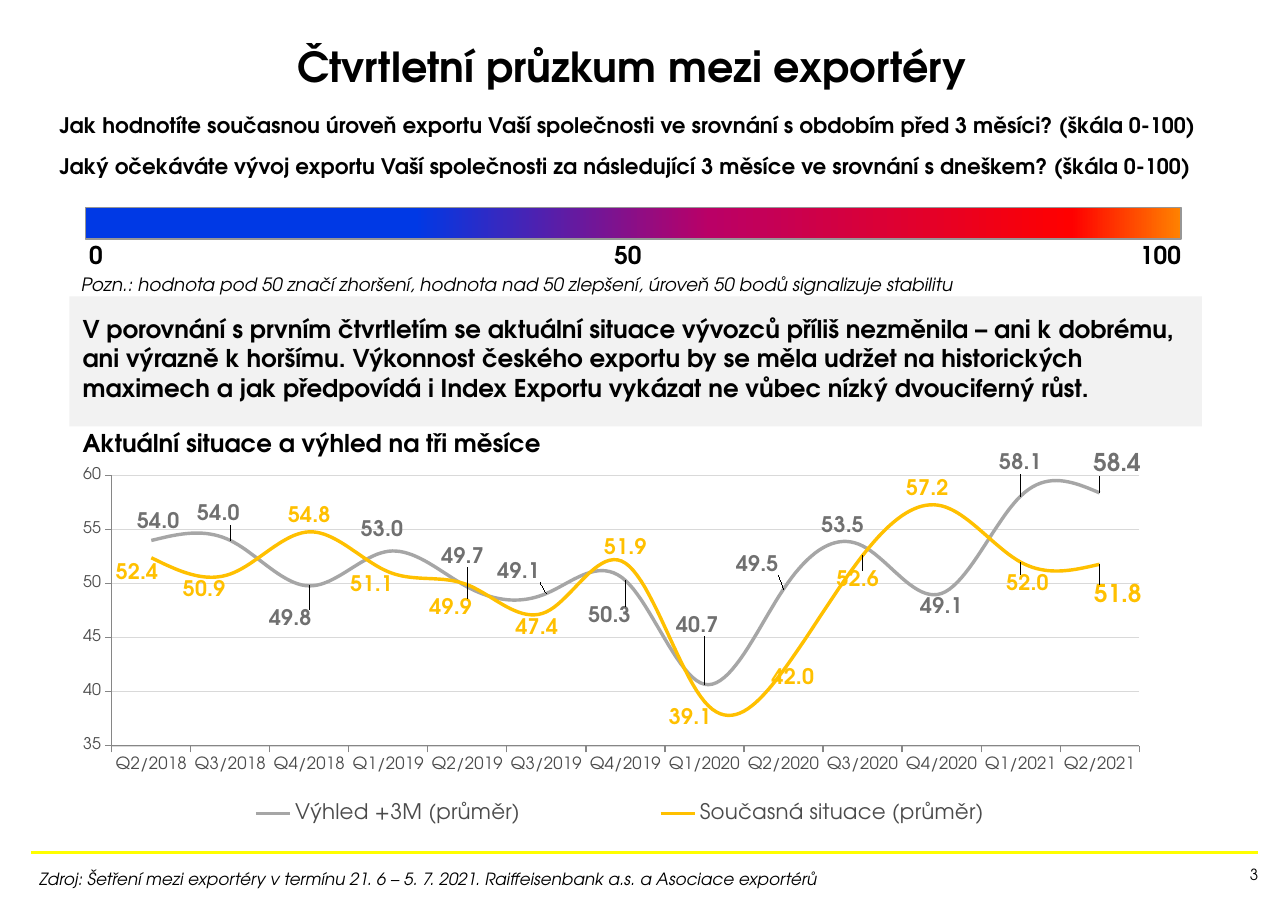
import dataclasses
import typing

import lxml.etree
import pptx
import pptx.chart.data
import pptx.dml.color
import pptx.enum.chart
import pptx.enum.shapes
import pptx.enum.text
import pptx.oxml.ns
import pptx.util

Pt = pptx.util.Pt
qn = pptx.oxml.ns.qn
Align = pptx.enum.text.PP_ALIGN
Anchor = pptx.enum.text.MSO_ANCHOR
Shape = pptx.enum.shapes.MSO_SHAPE
LabelPos = pptx.enum.chart.XL_LABEL_POSITION

W, H = pptx.util.Inches(11.69), pptx.util.Inches(8.27)
COL, ROW = W / 100, H / 100


@dataclasses.dataclass(frozen=True)
class Theme:
    font: str = "TeX Gyre Adventor"
    black: str = "000000"
    panel: str = "F2F2F2"
    rule: str = "FFFF00"
    frame: str = "969696"
    axis: str = "868686"
    grid: str = "D9D9D9"
    chart_text: str = "4B4B4B"
    outlook: str = "A6A6A6"
    outlook_label: str = "707070"
    current: str = "FFC000"
    scale: tuple = ((30, "0039E5"), (57, "BA0066"), (90, "FF0000"), (100, "FF8200"))
    title: float = 27
    large: float = 16
    medium: float = 14
    note: float = 12
    source: float = 11
    page: float = 10
    value_tick: float = 10.5


T = Theme()
WIDE = (0.12, 0.16, 0.12, 0)
NORMAL = (0.1, 0.05, 0.1, 0.05)
NONE = (0, 0, 0, 0)


class Box(typing.NamedTuple):
    col: float
    row: float
    cols: float
    rows: float

    def emu(self) -> tuple:
        return (int(self.col * COL), int(self.row * ROW),
                int(self.cols * COL), int(self.rows * ROW))


@dataclasses.dataclass(frozen=True)
class Block:
    box: Box
    lines: tuple
    size: float
    bold: bool = False
    italic: bool = False
    align: typing.Any = Align.LEFT
    insets: tuple = WIDE
    tabs: tuple = ()
    fill: str = ""


@dataclasses.dataclass(frozen=True)
class Line:
    name: str
    values: tuple
    color: str
    label_color: str
    label_pos: typing.Any
    nudges: dict


PLOT = (0.06, 0.08, 0.94, 0.66)
LEGEND = (0.07, 0.86, 0.91, 0.09)
LOW, HIGH, STEP = 35, 60, 5
QUARTERS = [f"Q{n % 4 + 1}/{2018 + n // 4}" for n in range(1, 14)]
LINES = (
    Line("Výhled +3M (průměr)",
         (54, 54, 49.8, 53, 49.7, 49.1, 50.3, 40.7, 49.5, 53.5, 49.1, 58.1, 58.4),
         T.outlook, T.outlook_label, LabelPos.BELOW,
         {0: (0.09, 3.04), 1: (-0.15, 3.69), 2: (-0.24, -1.74), 3: (-0.08, 3.3),
          4: (-0.06, 4.09), 5: (-0.35, 3.31), 6: (-0.2, -1.96), 7: (-0.09, 6.7),
          8: (-0.33, 3.56), 9: (-0.25, 3.17), 11: (0, 4.31), 12: (0.22, 4.07)}),
    Line("Současná situace (průměr)",
         (52.4, 50.9, 54.8, 51.1, 49.9, 47.4, 51.9, 39.1, 42, 52.6, 57.2, 52, 51.8),
         T.current, T.current, LabelPos.ABOVE,
         {0: (-0.18, -2.86), 1: (-0.33, -2.94), 3: (-0.21, -2.68), 4: (-0.21, -3.6),
          5: (-0.12, -2.95), 7: (-0.18, -2.99), 8: (0.12, -2.19), 9: (-0.06, -3.71),
          10: (-0.18, 0.11), 11: (0.09, -3.48), 12: (0.23, -4.39)}),
)

TITLE = Block(Box(5.47, 2.18, 87.17, 10.04), ("Čtvrtletní průzkum mezi exportéry",),
              T.title, bold=True, align=Align.CENTER, insets=NONE)
BLOCKS = (
    Block(Box(57.83, 94.92, 39.86, 5.08), ("3",), T.page, align=Align.RIGHT, insets=NONE),
    Block(Box(5.9, 24.43, 91.79, 6.05), ("0\t50\t100",), T.large, bold=True,
          tabs=((41.83, "ctr"), (84.77, "r"))),
    Block(Box(5.47, 29.38, 92.73, 3.63),
          ("Pozn.: hodnota pod 50 značí zhoršení, hodnota nad 50 zlepšení, úroveň 50 bodů signalizuje stabilitu",),
          T.note, italic=True, insets=NORMAL),
    Block(Box(5.39, 45.1, 72.97, 6.65), ("Aktuální situace a výhled na tři měsíce",),
          T.large, bold=True),
    Block(Box(3.59, 10.4, 92.9, 17.78),
          ("Jak hodnotíte současnou úroveň exportu Vaší společnosti ve srovnání s obdobím před 3 měsíci? (škála 0-100)",
           "Jaký očekáváte vývoj exportu Vaší společnosti za následující 3 měsíce ve srovnání s dneškem? (škála 0-100)"),
          T.medium, bold=True),
    Block(Box(2.22, 94.8, 85.03, 3.51),
          ("Zdroj: Šetření mezi exportéry v termínu 21. 6 – 5. 7. 2021. Raiffeisenbank a.s. a Asociace exportérů",),
          T.source, italic=True, insets=NORMAL),
)
SUMMARY = Block(
    Box(5.39, 32.53, 87.94, 14.27),
    ("V porovnání s prvním čtvrtletím se aktuální situace vývozců příliš nezměnila – ani k dobrému, "
     "ani výrazně k horšímu. Výkonnost českého exportu by se měla udržet na historických maximech "
     "a jak předpovídá i Index Exportu vykázat ne vůbec nízký dvouciferný růst.",),
    T.large, bold=True, fill=T.panel)


def rgb(color: str) -> pptx.dml.color.RGBColor:
    return pptx.dml.color.RGBColor.from_string(color)


def assign(obj: typing.Any, values: dict) -> None:
    for name, value in values.items():
        setattr(obj, name, value)


def style_font(font, size: float, color: str, bold: bool = False, italic: bool = False) -> None:
    assign(font, {"name": T.font, "size": Pt(size), "bold": bold, "italic": italic})
    font.color.rgb = rgb(color)


def style_line(line, color: str, width: float) -> None:
    line.color.rgb = rgb(color)
    line.width = Pt(width)


def write(sp, block: Block) -> None:
    assign(sp, dict(zip(("left", "top", "width", "height"), block.box.emu())))
    tf = sp.text_frame
    sides = ("margin_left", "margin_top", "margin_right", "margin_bottom")
    assign(tf, dict(zip(sides, map(pptx.util.Inches, block.insets))))
    assign(tf, {"word_wrap": True, "vertical_anchor": Anchor.TOP})
    for i, text in enumerate(block.lines):
        p = tf.add_paragraph() if i else tf.paragraphs[0]
        p.alignment = block.align
        if i:
            p.space_before = Pt(10)
        if block.tabs:
            tabs = lxml.etree.SubElement(p._p.get_or_add_pPr(), qn("a:tabLst"))
            for col, align in block.tabs:
                lxml.etree.SubElement(tabs, qn("a:tab"), pos=str(int(col * COL)), algn=align)
        p.text = text
        for r in p.runs:
            style_font(r.font, block.size, T.black, block.bold, block.italic)


def add_panel(s, box: Box):
    sp = s.shapes.add_shape(Shape.RECTANGLE, *box.emu())
    sp.shadow.inherit = False
    return sp


def add_scale(s) -> None:
    sp = add_panel(s, Box(6.67, 22.73, 85.03, 3.51))
    sp.fill.gradient()
    sp.fill.gradient_angle = 0
    stops = sp.element.xpath(".//a:gsLst")[0]
    stops[:] = []
    for pos, color in T.scale:
        stop = lxml.etree.SubElement(stops, qn("a:gs"), pos=str(pos * 1000))
        lxml.etree.SubElement(stop, qn("a:srgbClr"), val=color)
    style_line(sp.line, T.frame, 0.75)


def set_layout(parent, index: int, **values) -> None:
    for old in parent.findall(qn("c:layout")):
        parent.remove(old)
    layout = lxml.etree.Element(qn("c:layout"))
    manual = lxml.etree.SubElement(layout, qn("c:manualLayout"))
    for tag, value in values.items():
        lxml.etree.SubElement(manual, qn(f"c:{tag}"), val=str(value))
    parent.insert(index, layout)


def place(parent, index: int, area: tuple, **target) -> None:
    set_layout(parent, index, **target, xMode="edge", yMode="edge",
               **dict(zip("xywh", area)))


def label_line(ser, line: Line) -> None:
    labels = ser.data_labels
    assign(labels, {"show_value": True, "position": line.label_pos,
                    "number_format": "#,##0.0", "number_format_is_linked": False})
    style_font(labels.font, T.medium, line.label_color, bold=True)
    for i, (dx, dy) in line.nudges.items():
        label = ser.points[i].data_label
        size = T.large if i == len(QUARTERS) - 1 else T.medium
        style_font(label.font, size, line.label_color, bold=True)
        label.position = line.label_pos
        el = ser._element.xpath(f'c:dLbls/c:dLbl[c:idx/@val="{i}"]')[0]
        set_layout(el, 1, x=round(dx * PLOT[2] / len(QUARTERS), 4),
                   y=round(-dy * PLOT[3] / (HIGH - LOW), 4))
        el.insert(2, el.makeelement(qn("c:numFmt"), formatCode="#,##0.0", sourceLinked="0"))


def add_survey_chart(s) -> None:
    data = pptx.chart.data.CategoryChartData(number_format="#,##0.0")
    data.categories = QUARTERS
    for line in LINES:
        data.add_series(line.name, line.values)
    kind = pptx.enum.chart.XL_CHART_TYPE.LINE
    chart = s.shapes.add_chart(kind, *Box(3.59, 48.61, 85.03, 44.98).emu(), data).chart
    assign(chart, {"has_title": False, "has_legend": True})
    style_font(chart.font, T.value_tick, T.chart_text)
    assign(chart.legend, {"position": pptx.enum.chart.XL_LEGEND_POSITION.BOTTOM,
                          "include_in_layout": False})
    style_font(chart.legend.font, T.medium, T.chart_text)
    place(chart.legend._element, 1, LEGEND)
    place(chart.element.xpath(".//c:plotArea")[0], 0, PLOT, layoutTarget="inner")
    for axis, size in ((chart.category_axis, T.source), (chart.value_axis, T.value_tick)):
        axis.major_tick_mark = pptx.enum.chart.XL_TICK_MARK.OUTSIDE
        style_line(axis.format.line, T.axis, 0.75)
        style_font(axis.tick_labels.font, size, T.chart_text)
    axis = chart.value_axis
    assign(axis, {"minimum_scale": LOW, "maximum_scale": HIGH, "major_unit": STEP})
    assign(axis.tick_labels, {"number_format": "#,##0", "number_format_is_linked": False})
    style_line(axis.major_gridlines.format.line, T.grid, 0.5)
    chart.plots[0].vary_by_categories = False
    for ser, line in zip(chart.plots[0].series, LINES):
        ser.smooth = True
        style_line(ser.format.line, line.color, 2.25)
        label_line(ser, line)


def add_footer_rule(s) -> None:
    y = int(93.59 * ROW)
    rule = s.shapes.add_connector(pptx.enum.shapes.MSO_CONNECTOR.STRAIGHT,
                                  int(2.4 * COL), y, int(97.69 * COL), y)
    style_line(rule.line, T.rule, 1.5)
    lxml.etree.SubElement(rule.element.spPr, qn("a:effectLst"))


def main() -> None:
    prs = pptx.Presentation()
    assign(prs, {"slide_width": W, "slide_height": H})
    s = prs.slides.add_slide(prs.slide_layouts[5])
    write(s.shapes.title, TITLE)
    s.shapes.title.text_frame.vertical_anchor = Anchor.MIDDLE
    add_footer_rule(s)
    add_scale(s)
    for block in BLOCKS:
        write(s.shapes.add_textbox(*block.box.emu()), block)
    add_survey_chart(s)
    sp = add_panel(s, SUMMARY.box)
    sp.fill.solid()
    sp.fill.fore_color.rgb = rgb(SUMMARY.fill)
    sp.line.fill.background()
    write(sp, SUMMARY)
    prs.save("out.pptx")


if __name__ == "__main__":
    main()
